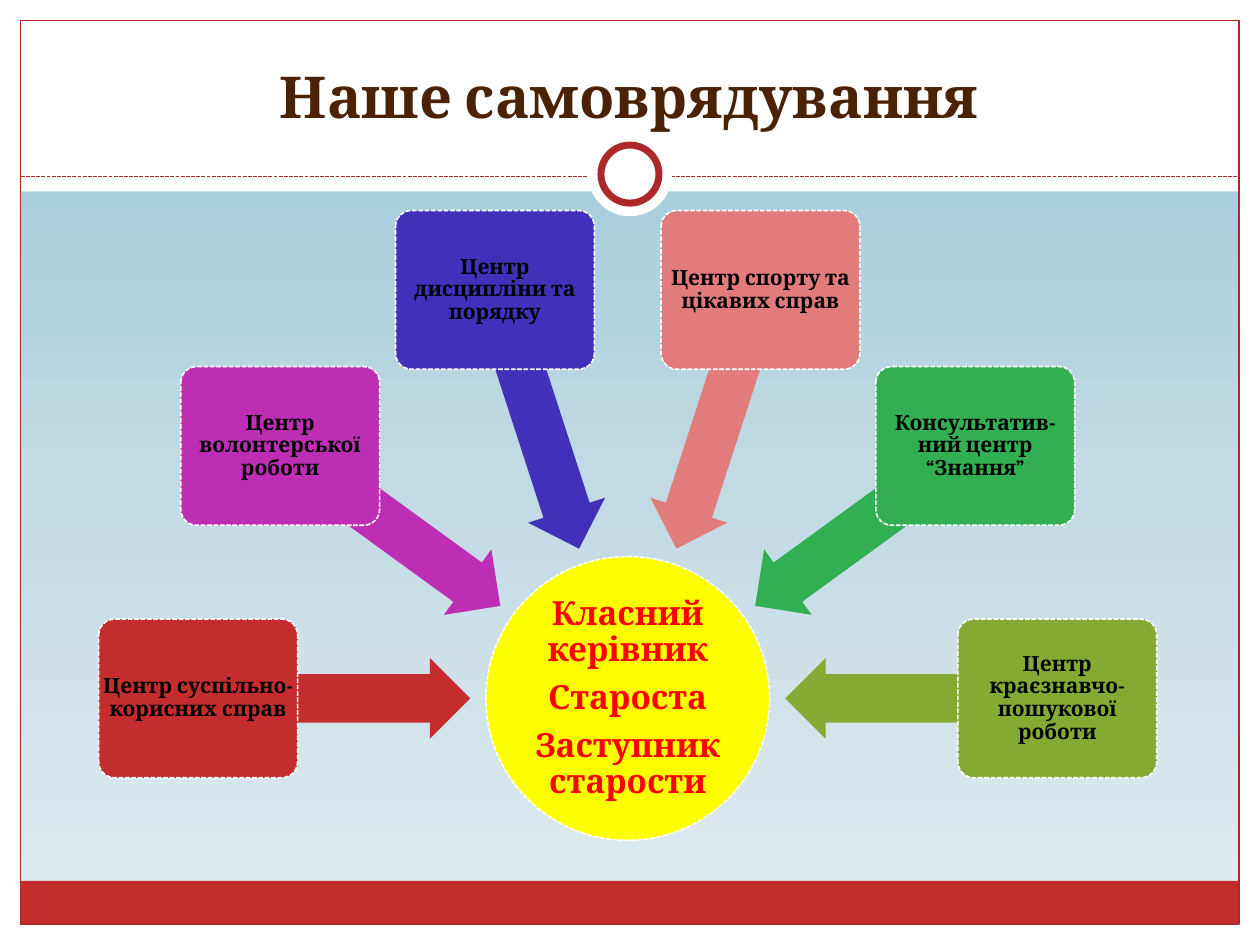
from copy import deepcopy
from dataclasses import dataclass
from math import cos, radians, sin

from pptx import Presentation
from pptx import util as u
from pptx.dml import color as c
from pptx.enum import dml, shapes, text
from pptx.oxml import ns


@dataclass(frozen=True)
class Theme:
    """Colours, font and type sizes of the deck."""
    font: str = "Cambria"
    title_size: int = 33
    hub_size: int = 19
    label_size: int = 12
    sky: tuple = ("98C5D6", "C1DAE4", "E1ECF1")
    white: str = "FFFFFF"
    band: str = "C32D2E"
    rule: str = "AC2829"
    title: str = "4B2203"
    label: str = "000000"
    hub: str = "FFFF00"
    hub_text: str = "FF0000"


@dataclass(frozen=True)
class Box:
    """A rectangle in centimetres."""
    left: float
    top: float
    width: float
    height: float

    @property
    def center(self):
        """Return the middle point."""
        return self.left + self.width / 2, self.top + self.height / 2

    def emu(self):
        """Return the four lengths for python-pptx."""
        return [u.Cm(v) for v in (self.left, self.top, self.width, self.height)]


THEME = Theme()
MARGIN = 0.42
HUB_LINES = ["Класний керівник", "Староста", "Заступник старости"]
CENTERS = [
    ("Центр суспільно-корисних справ", "C32D2E"),
    ("Центр волонтерської роботи", "BE2EB5"),
    ("Центр дисципліни та порядку", "4130B9"),
    ("Центр спорту та цікавих справ", "E17B7C"),
    ("Консультатив-ний центр “Знання”", "32AF52"),
    ("Центр краєзнавчо-пошукової роботи", "84AA33"),
]


def rgb(value):
    """Turn a hex string into a colour."""
    return c.RGBColor.from_string(value)


def box_around(x, y, width, height):
    """Return a box centred on a point."""
    return Box(x - width / 2, y - height / 2, width, height)


def style_line(line, color, width, dashed=False):
    """Set colour, width and dash of a line."""
    line.color.rgb = rgb(color)
    line.width = u.Pt(width)
    if dashed:
        line.dash_style = dml.MSO_LINE.SQUARE_DOT


def add_shape(page, kind, box, fill=None, line=None, width=0.75, dashed=False):
    """Add a flat preset shape."""
    shape = page.shapes.add_shape(kind, *box.emu())
    shape.shadow.inherit = False
    if fill:
        shape.fill.solid()
        shape.fill.fore_color.rgb = rgb(fill)
    else:
        shape.fill.background()
    if line:
        style_line(shape.line, line, width, dashed)
    else:
        shape.line.fill.background()
    return shape


def write(frame, lines, size, color, anchor, spacing=None, after=0, inset=None):
    """Fill a text frame with centred bold paragraphs."""
    frame.word_wrap = True
    frame.auto_size = text.MSO_AUTO_SIZE.NONE
    frame.vertical_anchor = anchor
    if inset is not None:
        frame.margin_left = frame.margin_right = u.Cm(inset)
        frame.margin_top = frame.margin_bottom = u.Cm(inset)
    for index, line in enumerate(lines):
        para = frame.add_paragraph() if index else frame.paragraphs[0]
        para.alignment = text.PP_ALIGN.CENTER
        para.space_after = u.Pt(after)
        if spacing:
            para.line_spacing = spacing
        span = para.add_run()
        span.text = line
        span.font.name = THEME.font
        span.font.size = u.Pt(size)
        span.font.bold = True
        span.font.color.rgb = rgb(color)


def add_label(page, box, lines, size, color, after, inset):
    """Lay a text box over a diagram shape."""
    frame = page.shapes.add_textbox(*box.emu()).text_frame
    write(frame, lines, size, color, text.MSO_ANCHOR.MIDDLE, 0.9, after, inset)


def paint_background(page):
    """Give the page its vertical sky gradient."""
    fill = page.background.fill
    fill.gradient()
    fill.gradient_angle = 270
    first = next(page.element.iter(ns.qn("a:gs")))
    first.addnext(deepcopy(first))
    for stop, position, color in zip(fill.gradient_stops, (0, 0.5, 1), THEME.sky):
        stop.position = position
        stop.color.rgb = rgb(color)


def add_frame(page, box):
    """Draw the white margins, red band, outline and ring."""
    rect, oval = shapes.MSO_SHAPE.RECTANGLE, shapes.MSO_SHAPE.OVAL
    right, bottom = box.left + box.width, box.top + box.height
    inner = Box(box.left + MARGIN, box.top + MARGIN,
                box.width - 2 * MARGIN, box.height - 2 * MARGIN)
    for margin in (
        Box(box.left, bottom - MARGIN, box.width, MARGIN),
        Box(box.left, box.top, box.width, 3.86),
        Box(box.left, box.top, MARGIN, box.height),
        Box(right - MARGIN, box.top, MARGIN, box.height),
    ):
        add_shape(page, rect, margin, THEME.white)
    band = 0.87
    add_shape(page, rect,
              Box(inner.left, bottom - MARGIN - band, inner.width, band), THEME.band)
    add_shape(page, rect, inner, line=THEME.rule)
    level = u.Cm(box.top + 3.56)
    rule = page.shapes.add_connector(
        shapes.MSO_CONNECTOR.STRAIGHT,
        u.Cm(inner.left), level, u.Cm(right - MARGIN), level)
    style_line(rule.line, THEME.rule, 0.75, True)
    rule.element.spPr.append(rule.element.makeelement(ns.qn("a:effectLst")))
    middle = box.center[0], box.top + 3.51
    add_shape(page, oval, box_around(*middle, 1.7, 1.7), THEME.white)
    add_shape(page, oval, box_around(*middle, 1.17, 1.17), THEME.white, THEME.rule, 4)


def add_title(page, box, words):
    """Place and format the title placeholder above the frame."""
    title = page.shapes.title
    title.left, title.top, title.width, title.height = box.emu()
    write(title.text_frame, [words], THEME.title_size, THEME.title,
          text.MSO_ANCHOR.BOTTOM)
    title.element.getparent().append(title.element)


def add_diagram(page, box):
    """Fan the centres over a hub at the bottom of the box."""
    hub_size, card_width, card_height = 5.72, 4.01, 3.2
    x = box.center[0]
    y = box.top + box.height - hub_size / 2
    reach = (box.width - card_width) / 2
    hub = box_around(x, y, hub_size, hub_size)
    add_shape(page, shapes.MSO_SHAPE.OVAL, hub, THEME.hub, THEME.white, 0.9, True)
    add_label(page, hub, HUB_LINES, THEME.hub_size, THEME.hub_text, 7, 0.03)
    step = 180 / (len(CENTERS) - 1)
    for index, (name, color) in enumerate(CENTERS):
        turn = index * step
        dx, dy = -cos(radians(turn)), -sin(radians(turn))
        arrow = add_shape(page, shapes.MSO_SHAPE.LEFT_ARROW,
                          box_around(x + 5.92 * dx, y + 5.92 * dy, 5.49, 1.63), color)
        arrow.adjustments[0], arrow.adjustments[1] = 0.6, 0.5
        arrow.rotation = (180 + turn) % 360
        card = box_around(x + reach * dx, y + reach * dy, card_width, card_height)
        shape = add_shape(page, shapes.MSO_SHAPE.ROUNDED_RECTANGLE, card, color,
                          THEME.white, 0.9, True)
        shape.adjustments[0] = 0.1
        add_label(page, card, [name], THEME.label_size, THEME.label, 4, 0.08)


def main():
    """Build and save the deck."""
    deck = Presentation()
    deck.slide_width, deck.slide_height = u.Cm(25.4), u.Cm(19.05)
    page = deck.slides.add_slide(deck.slide_layouts[5])
    paint_background(page)
    add_frame(page, Box(0, 0, 25.4, 19.05))
    add_title(page, Box(0.84, 0.64, 23.7, 2.11), "Наше самоврядування")
    add_diagram(page, Box(1.99, 4.24, 21.33, 12.7))
    deck.save("out.pptx")


if __name__ == "__main__":
    main()
